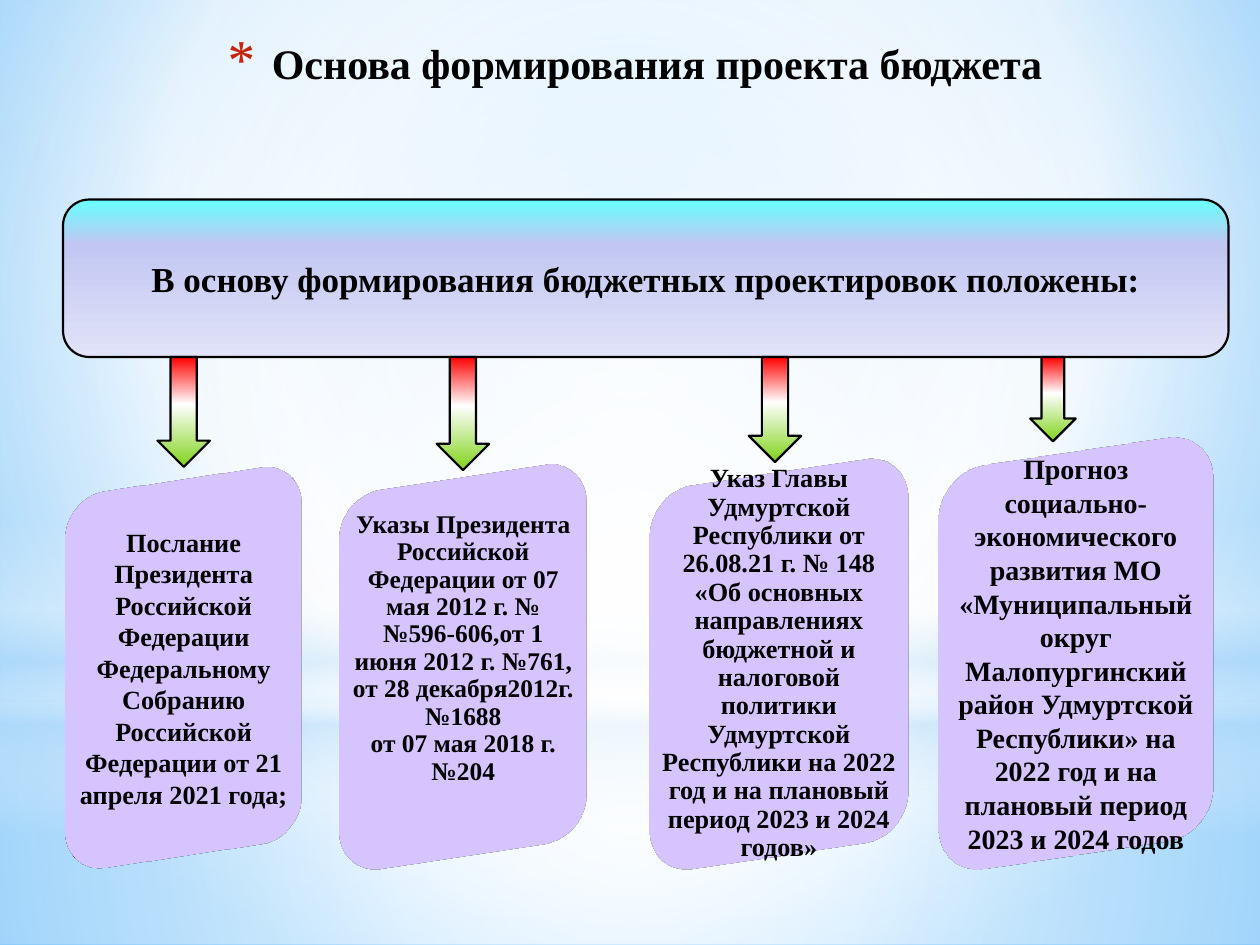
from lxml import etree
from pptx import Presentation
from pptx.dml.color import RGBColor
from pptx.enum import shapes, text
from pptx.oxml import ns
from pptx.util import Pt

COLORS = {
    "black": "000000",
    "card": "C5B3F7",
    "bullet": "C3260C",
}
FONT = "Times New Roman"
SLIDE_W, SLIDE_H = 720, 540
BAR_BOTTOM = 204
CARD_BOTTOM = 494.6

# Gradient stops: position, colour, opacity (all percentages)
BACKDROP = [(0, "9ED5FF", 100), (60, "FFFFFF", 100), (100, "5BB9FF", 100)]
LOWER_HAZE = [(0, "FFFFFF", 91), (37, "FFFFFF", 76), (100, "B4DCFA", 79)]
UPPER_HAZE = [(0, "FFFFFF", 89), (48, "FFFFFF", 62), (100, "B4DCFA", 79)]
HORIZON = [(0, "FFFFFF", 0), (29, "FFFFFF", 30), (45, "B4DCFA", 40),
           (55, "FFFFFF", 26), (65, "B4DCFA", 60), (100, "FFFFFF", 0)]
GLOW = [(0, "FFFFFF", 100), (56, "FFFFFF", 0)]
BAR_FILL = [(0, "66FFFF", 100), (28, "C1C7F2", 100), (100, "E1E3F8", 100)]
ARROW_FILL = [(0, "FF0000", 100), (43, "FFFFFF", 100), (100, "81D31A", 100)]
CENTER = (50, 50, 50, 50)

# Left, width, height of each arrow
ARROWS = [(90, 30, 62.8), (249.6, 30, 64.6), (427.9, 30, 60), (588.7, 26, 48.2)]

# Left, top, width, font size, line spacing, extra space below, paragraphs
FORECAST = (527.3, 252, 175, 16, 1, 0, [
    "Прогноз социально-экономического",
    "развития МО «Муниципальный округ Малопургинский",
    "район Удмуртской Республики» на 2022 год и на плановый период "
    "2023 и 2024 годов"])
DECREES = [
    (30, 268.4, 150, 15, 1, 0, [
        "Послание Президента Российской Федерации Федеральному Собранию "
        "Российской Федерации от 21 апреля 2021 года;"]),
    (186.2, 267, 157, 14.5, 0.9, 20.5, [
        "Указы Президента Российской Федерации от 07 мая 2012 г. №№596-606,от 1 "
        "июня 2012 г. №761, от 28 декабря2012г.№1688",
        "от 07 мая 2018 г. №204"]),
    (362.6, 264, 165, 15, 0.9, 0, [
        "Указ Главы Удмуртской Республики от 26.08.21 г. № 148 «Об основных "
        "направлениях бюджетной и налоговой политики Удмуртской Республики "
        "на 2022 год и на плановый период 2023 и 2024 годов»"]),
]


def rgb(name):
    return RGBColor.from_string(COLORS[name])


def add_node(parent, tag, **attributes):
    node = etree.SubElement(parent, ns.qn(tag))
    for key, value in attributes.items():
        node.set(key, str(value))
    return node


def set_gradient(fill, element, stops, focus=None):
    """Vertical gradient, or a circular one around the focus rectangle."""
    fill.gradient()
    grad = element.find(".//" + ns.qn("a:gradFill"))
    for child in list(grad):
        grad.remove(child)
    stop_list = add_node(grad, "a:gsLst")
    for position, color, opacity in stops:
        stop = add_node(stop_list, "a:gs", pos=position * 1000)
        color_node = add_node(stop, "a:srgbClr", val=color)
        if opacity < 100:
            add_node(color_node, "a:alpha", val=opacity * 1000)
    if focus:
        circle = add_node(grad, "a:path", path="circle")
        sides = {side: value * 1000 for side, value in zip("ltrb", focus)}
        add_node(circle, "a:fillToRect", **sides)
    else:
        add_node(grad, "a:lin", ang=5400000, scaled=0)


def add_shape(page, kind, left, top, width, height):
    shape = page.shapes.add_shape(kind, Pt(left), Pt(top), Pt(width), Pt(height))
    shape.shadow.inherit = False
    shape.line.color.rgb = rgb("black")
    shape.line.width = Pt(1.25)
    return shape


def add_gradient_shape(page, kind, left, top, width, height, stops, focus=None):
    shape = add_shape(page, kind, left, top, width, height)
    set_gradient(shape.fill, shape._element, stops, focus)
    return shape


def write_text(box, paragraphs, size, spacing=None,
               anchor=text.MSO_ANCHOR.MIDDLE):
    frame = box.text_frame
    frame.word_wrap = True
    frame.vertical_anchor = anchor
    for index, words in enumerate(paragraphs):
        para = frame.add_paragraph() if index else frame.paragraphs[0]
        para.alignment = text.PP_ALIGN.CENTER
        para.line_spacing = spacing
        span = para.add_run()
        span.text = words
        span.font.name = FONT
        span.font.size = Pt(size)
        span.font.bold = True
        span.font.color.rgb = rgb("black")


def add_title(page):
    box = page.shapes.add_textbox(Pt(60), Pt(18), Pt(606), Pt(74))
    write_text(box, ["Основа формирования проекта бюджета"], 24,
               anchor=text.MSO_ANCHOR.TOP)
    props = box.text_frame.paragraphs[0]._p.get_or_add_pPr()
    props.set("marL", str(Pt(25)))
    props.set("indent", str(-Pt(25)))
    add_node(add_node(props, "a:buClr"), "a:srgbClr", val=COLORS["bullet"])
    add_node(props, "a:buSzPct", val=128000)
    add_node(props, "a:buFont", typeface="Georgia")
    add_node(props, "a:buChar", char="*")


def turn_sideways(shape):
    """Show the shape in an off-axis isometric view."""
    scene = add_node(shape._element.spPr, "a:scene3d")
    add_node(scene, "a:camera", prst="isometricOffAxis1Right")
    add_node(scene, "a:lightRig", rig="threePt", dir="t")


def add_card(page, left, top, width, size, spacing, space_below, paragraphs):
    card = add_shape(page, shapes.MSO_SHAPE.ROUNDED_RECTANGLE,
                     left, top, width, CARD_BOTTOM - top)
    card.fill.solid()
    card.fill.fore_color.rgb = rgb("card")
    turn_sideways(card)
    card.text_frame.margin_bottom = Pt(3.6 + space_below)
    write_text(card, paragraphs, size, spacing)


def add_backdrop(master, page):
    """Colour the master and lay soft light over it, behind every slide."""
    set_gradient(master.background.fill, master._element, BACKDROP,
                 (20, 10, 20, 60))
    rect, oval = shapes.MSO_SHAPE.RECTANGLE, shapes.MSO_SHAPE.OVAL
    layers = [(rect, 402, 138, LOWER_HAZE, CENTER),
              (rect, 0, 402, UPPER_HAZE, CENTER),
              (rect, 297, 180, HORIZON, None),
              (oval, 126, 402, GLOW, CENTER)]
    for index, (kind, top, height, stops, focus) in enumerate(layers):
        layer = add_gradient_shape(page, kind, 0, top, SLIDE_W, height,
                                   stops, focus)
        layer.line.fill.background()
        layer._element.nvSpPr.cNvPr.set("id", str(101 + index))
        master.shapes._spTree.insert(2 + index, layer._element)


def main():
    deck = Presentation()
    deck.slide_width, deck.slide_height = Pt(SLIDE_W), Pt(SLIDE_H)
    page = deck.slides.add_slide(deck.slide_layouts[6])

    # Backdrop and heading
    add_backdrop(deck.slide_master, page)
    add_title(page)

    # Forecast card, then the bar that introduces the four sources
    add_card(page, *FORECAST)
    bar = add_gradient_shape(page, shapes.MSO_SHAPE.ROUNDED_RECTANGLE,
                             36, BAR_BOTTOM - 90, 666, 90, BAR_FILL)
    write_text(bar, ["В основу формирования бюджетных проектировок положены:"], 20)

    # Arrows down to the cards
    for left, width, height in ARROWS:
        add_gradient_shape(page, shapes.MSO_SHAPE.DOWN_ARROW,
                           left, BAR_BOTTOM, width, height, ARROW_FILL)

    # Cards with the decrees and the address
    for card in DECREES:
        add_card(page, *card)

    deck.save("out.pptx")


if __name__ == "__main__":
    main()
